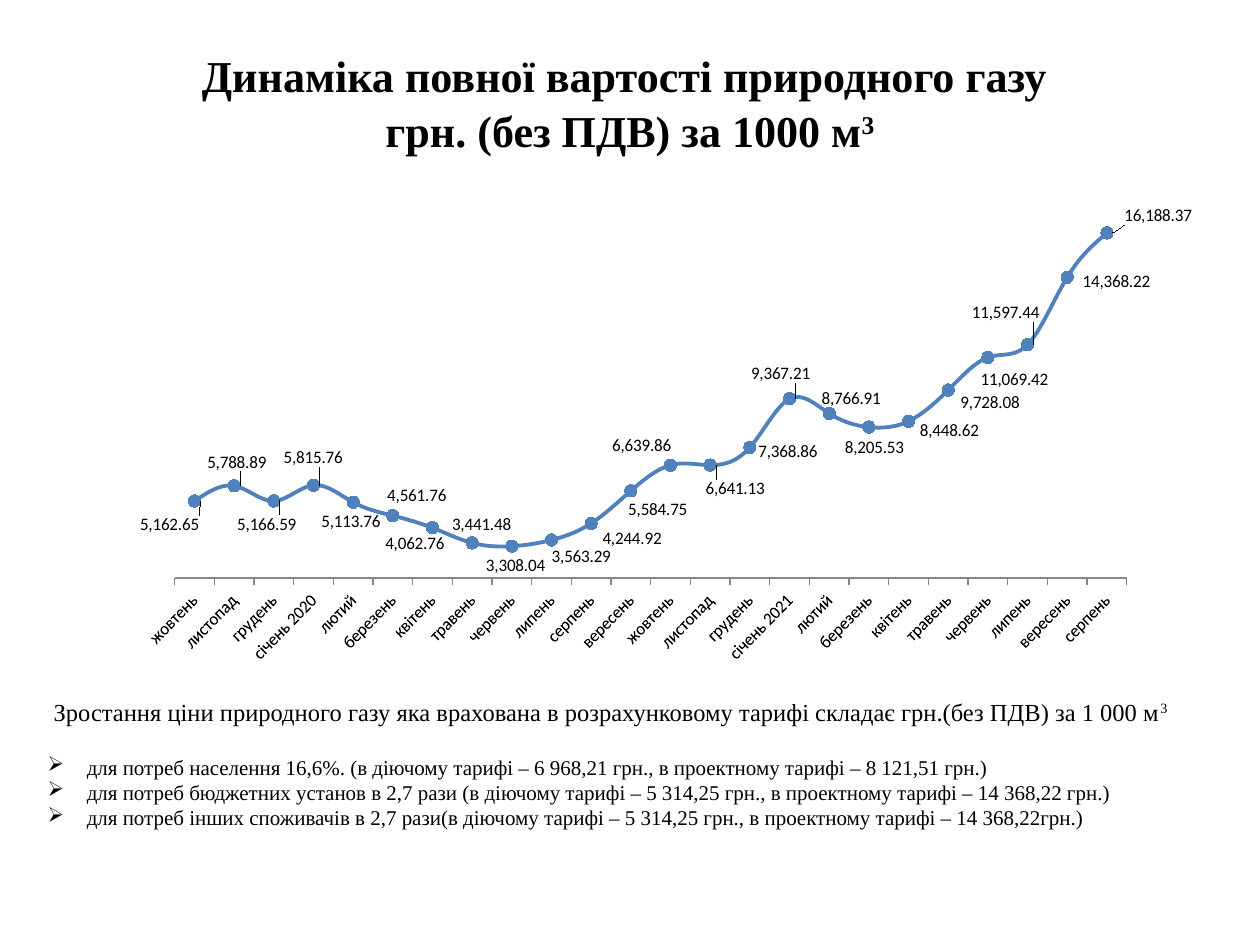
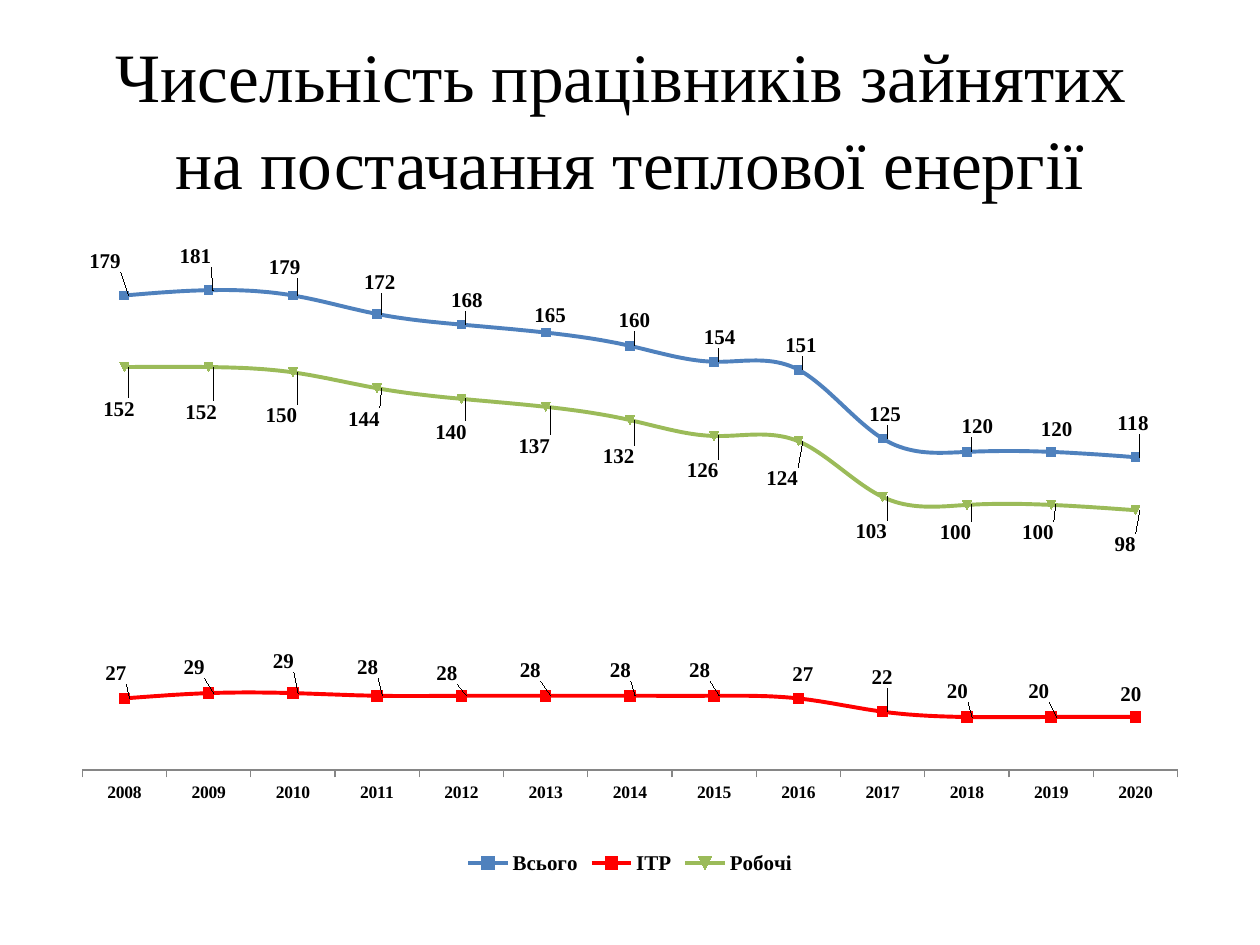
import pptx
import pptx.chart.data
import pptx.dml.color
import pptx.enum.chart
import pptx.enum.text
import pptx.oxml
import pptx.oxml.ns
import pptx.util
from lxml import etree

Cm, Pt = pptx.util.Cm, pptx.util.Pt
qn = pptx.oxml.ns.qn
SERIF = "Times New Roman"
BLACK, BLUE, RED, GREEN, GREY = "000000", "4F81BD", "FF0000", "9BBB59", "868686"
MARK = pptx.enum.chart.XL_MARKER_STYLE

# Text runs: a leading "^" marks a superscript run.
GAS_TITLE = ["Динаміка повної вартості природного газу \vгрн. (без ПДВ) за 1000 м", "^3"]
STAFF_TITLE = ["Чисельність працівників зайнятих \vна постачання теплової енергії"]
GROWTH = [" Зростання ціни природного газу яка врахована в розрахунковому тарифі "
          "складає грн.(без ПДВ) за 1 000 м", "^3"]
NEEDS = [
    "для потреб населення 16,6%. (в діючому тарифі – 6 968,21 грн., "
    "в проектному тарифі – 8 121,51 грн.)",
    "для потреб бюджетних установ в 2,7 рази (в діючому тарифі – 5 314,25 грн., "
    "в проектному тарифі – 14 368,22 грн.)",
    "для потреб інших споживачів в 2,7 рази(в діючому тарифі – 5 314,25 грн., "
    "в проектному тарифі – 14 368,22грн.)",
]

# Points: value, then the label centre in mm right of and below the marker.
GAS = [
    ("жовтень", 5162.65, -6.5, 4.8), ("листопад", 5788.89, -0.8, -4.8),
    ("грудень", 5166.59, -2.8, 4.8), ("січень 2020", 5815.76, -1.4, -5.6),
    ("лютий", 5113.76, -1.8, 3.8), ("березень", 4561.76, 3.6, -4),
    ("квітень", 4062.76, -5, 3.2), ("травень", 3441.48, 0.6, -3.8),
    ("червень", 3308.04, -0.6, 4), ("липень", 3563.29, 4.8, 3.4),
    ("серпень", 4244.92, 7.1, 3), ("вересень", 5584.75, 4.2, 3.8),
    ("жовтень", 6639.86, -7.3, -4), ("листопад", 6641.13, 3.8, 4.8),
    ("грудень", 7368.86, 6.5, 0.8), ("січень 2021", 9367.21, -3.2, -5.2),
    ("лютий", 8766.91, 3.2, -3), ("березень", 8205.53, -0.2, 4.2),
    ("квітень", 8448.62, 7.1, 1.8), ("травень", 9728.08, 7.3, 2.6),
    ("червень", 11069.42, 4, 4.4), ("липень", 11597.44, -6, -6.5),
    ("вересень", 14368.22, 8.7, 0.8), ("серпень", 16188.37, 9.1, -3.6),
]
YEARS = [str(year) for year in range(2008, 2021)]
TOTAL = [(179, -4.8, -6.9), (181, -3.6, -6.9), (179, -2.6, -5.6), (172, -0.4, -6.5),
         (168, 0.2, -5), (165, 0, -3.4), (160, 0, -5.2), (154, 0.2, -5), (151, -0.4, -5),
         (125, -0.4, -5), (120, 1.2, -5.2), (120, 0.2, -4.6), (118, -1.4, -6.9)]
OFFICE = [(27, -2.8, -5), (29, -4, -5.2), (29, -3, -6.5), (28, -3, -5.8),
          (28, -4, -4.6), (28, -4.2, -5.2), (28, -3, -5.2), (28, -4, -5.2), (27, -0.2, -4.8),
          (22, -1.2, -6.9), (20, -3, -5.2), (20, -3.6, -5.2), (20, -2, -4.6)]
WORKERS = [(152, -2, 8.5), (152, -2.4, 9.1), (150, -3.2, 8.7), (144, -3.6, 6.2),
           (140, -3, 6.7), (137, -3.2, 7.9), (132, -3.2, 7.3), (126, -3.2, 6.9),
           (124, -4.2, 7.5), (103, -3.2, 6.9), (100, -3.2, 5.6), (100, -3.6, 5.6),
           (98, -3, 6.9)]

GAS_CHART = dict(
    box=(1.52, 3.23, 22.53, 10.72), plot=(0.091, 0.054, 0.873, 0.732),
    cats=[row[0] for row in GAS], font="Calibri", size=10, bold=False,
    scale=(2000, 18000, 2000), form="#,##0.00", digit=1.5, turn=-45,
    series=[("Series 1", BLUE, MARK.CIRCLE, 7, [row[1:] for row in GAS])])
STAFF_CHART = dict(
    box=(1.27, 4.45, 22.86, 13.28), plot=(0.017, 0.029, 0.966, 0.805),
    cats=YEARS, font=SERIF, size=12, bold=True,
    scale=(0, 200, 50), form="General", digit=2.1, turn=0,
    series=[("Всього", BLUE, MARK.AUTOMATIC, 5, TOTAL),
            ("ІТР", RED, MARK.SQUARE, 6, OFFICE),
            ("Робочі", GREEN, MARK.AUTOMATIC, 5, WORKERS)])


def rgb(code):
    return pptx.dml.color.RGBColor.from_string(code)


def style(font, size, bold=False, name=SERIF):
    font.name, font.size, font.bold = name, Pt(size), bold
    font.color.rgb = rgb(BLACK)


def write(para, parts, size, bold=False):
    """Fill a paragraph, raising the parts that start with "^"."""
    para.text = parts[0]
    for part in parts[1:]:
        para.add_run().text = part.lstrip("^")
    for run in para.runs:
        style(run.font, size, bold)
    for run in para.runs[len(para.runs) - len(parts) + 1:]:
        run.font._element.set("baseline", "30000")


def add_box(slide, left, top, width, height):
    frame = slide.shapes.add_textbox(Cm(left), Cm(top), Cm(width), Cm(height)).text_frame
    frame.word_wrap = True
    return frame


def add_title(slide, parts, size, bold=False, top=0.76):
    frame = add_box(slide, 1.27, top, 22.86, 3.18)
    frame.vertical_anchor = pptx.enum.text.MSO_ANCHOR.MIDDLE
    para = frame.paragraphs[0]
    para.alignment = pptx.enum.text.PP_ALIGN.CENTER
    para.line_spacing = 1.05
    write(para, parts, size, bold)


def add_bullet(frame, text):
    para = frame.add_paragraph()
    write(para, [text], 12)
    props = para._p.get_or_add_pPr()
    props.set("marL", str(Cm(0.79)))
    props.set("indent", str(-Cm(0.79)))
    etree.SubElement(props, qn("a:buChar")).set("char", "➢")


def layout(**vals):
    """Build a manual chart layout from its named entries."""
    root = pptx.oxml.parse_xml("<c:layout %s/>" % pptx.oxml.ns.nsdecls("c"))
    manual = etree.SubElement(root, qn("c:manualLayout"))
    for key, val in vals.items():
        etree.SubElement(manual, qn("c:" + key)).set("val", str(val))
    return root


def place_plot(chart, x, y, w, h):
    area = chart._chartSpace.find(".//" + qn("c:plotArea"))
    for old in area.findall(qn("c:layout")):
        area.remove(old)
    area.insert(0, layout(layoutTarget="inner", xMode="edge", yMode="edge",
                          x=x, y=y, w=w, h=h))


def add_labels(series, points, conf):
    labels = series.data_labels
    labels.show_value = True
    labels.number_format, labels.number_format_is_linked = conf["form"], False
    style(labels.font, conf["size"], conf["bold"], conf["font"])
    for i in range(len(points)):
        label = series.points[i].data_label
        style(label.font, conf["size"], conf["bold"], conf["font"])
        label.position = pptx.enum.chart.XL_LABEL_POSITION.RIGHT
    wide, high = conf["box"][2:]
    places = labels._element.findall(qn("c:dLbl"))
    for place, (value, right, down) in zip(places, points):
        chars = len(f"{value:,}")
        half = chars * conf["digit"] / 2 + 1
        place[0].addnext(layout(x=round((right - half) / wide / 10, 4),
                                y=round(down / high / 10, 4)))


def add_lines(slide, conf):
    data = pptx.chart.data.CategoryChartData(number_format=conf["form"])
    data.categories = conf["cats"]
    for name, _, _, _, points in conf["series"]:
        data.add_series(name, [point[0] for point in points])
    chart = slide.shapes.add_chart(pptx.enum.chart.XL_CHART_TYPE.LINE_MARKERS,
                                   *map(Cm, conf["box"]), data).chart
    chart.has_title = False
    style(chart.font, 10, name=conf["font"])
    place_plot(chart, *conf["plot"])

    axis = chart.value_axis
    axis.minimum_scale, axis.maximum_scale, axis.major_unit = conf["scale"]
    axis.has_major_gridlines = axis.visible = False
    axis = chart.category_axis
    axis.major_tick_mark = pptx.enum.chart.XL_TICK_MARK.OUTSIDE
    axis.format.line.color.rgb = rgb(GREY)
    style(axis.tick_labels.font, 10, conf["bold"], conf["font"])
    if conf["turn"]:
        body = axis._element.find(".//" + qn("a:bodyPr"))
        body.set("rot", str(conf["turn"] * 60000))

    chart.has_legend = len(conf["series"]) > 1
    if chart.has_legend:
        chart.legend.position = pptx.enum.chart.XL_LEGEND_POSITION.BOTTOM
        chart.legend.include_in_layout = False
        style(chart.legend.font, 12, True, conf["font"])

    plot = chart.plots[0]
    plot.vary_by_categories = False
    for series, (_, color, mark, size, points) in zip(plot.series, conf["series"]):
        series.smooth = True
        series.format.line.width = Pt(2.25)
        series.format.line.color.rgb = rgb(color)
        series.marker.style, series.marker.size = mark, size
        fill = series.marker.format.fill
        fill.solid()
        fill.fore_color.rgb = rgb(color)
        series.marker.format.line.color.rgb = rgb(color)
        add_labels(series, points, conf)


def main():
    deck = pptx.Presentation()
    deck.slide_width, deck.slide_height = Cm(25.4), Cm(19.05)
    blank = deck.slide_layouts[6]

    gas = deck.slides.add_slide(blank)
    add_title(gas, GAS_TITLE, 25.2, True, top=0.45)
    frame = add_box(gas, 0.71, 13.92, 24.2, 3)
    write(frame.paragraphs[0], GROWTH, 14)
    frame.paragraphs[0].space_after = Pt(16)
    for need in NEEDS:
        add_bullet(frame, need)
    add_lines(gas, GAS_CHART)

    staff = deck.slides.add_slide(blank)
    add_title(staff, STAFF_TITLE, 39.6)
    add_lines(staff, STAFF_CHART)
    deck.save("out.pptx")


if __name__ == "__main__":
    main()
